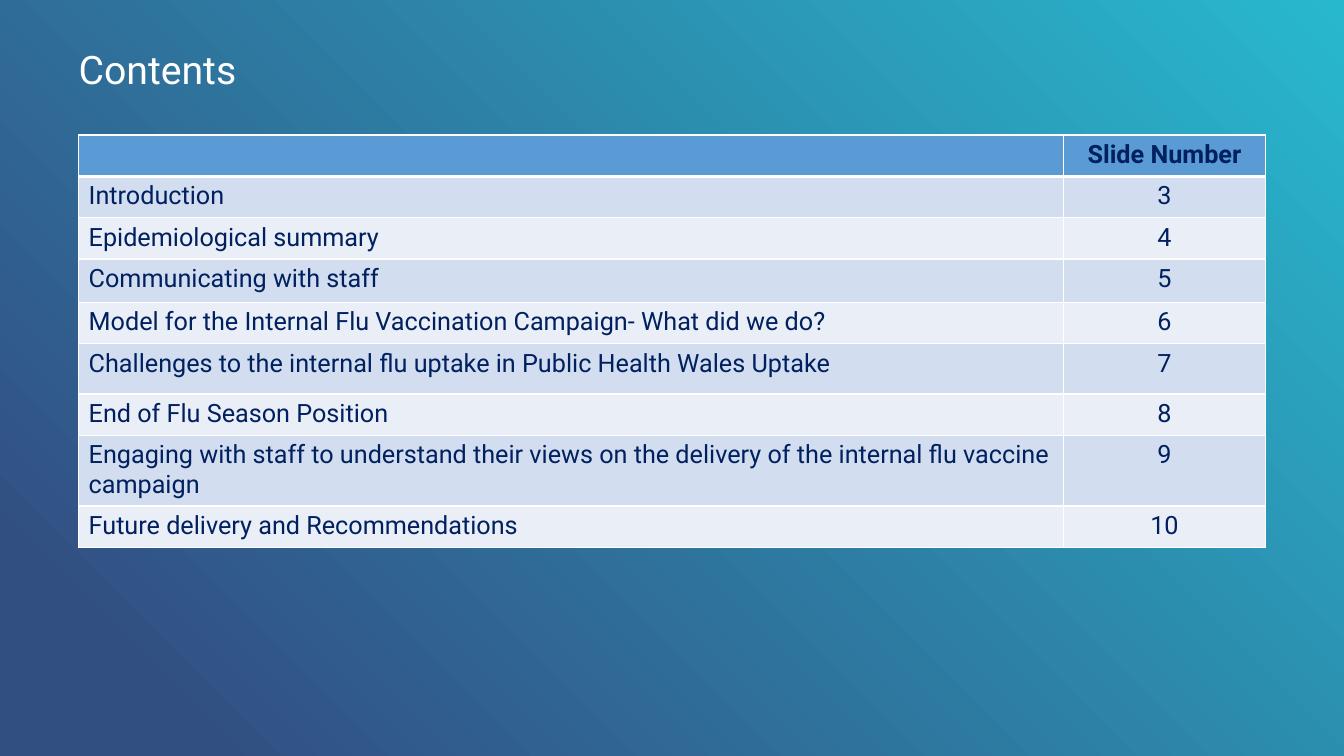
import pptx
import pptx.util
import pptx.dml.color
import pptx.enum.text
import pptx.oxml
import pptx.oxml.ns
from dataclasses import dataclass

Inches = pptx.util.Inches
Pt = pptx.util.Pt
ALIGN = pptx.enum.text.PP_ALIGN


@dataclass(frozen=True)
class Theme:
    font: str = "Roboto"
    title: int = 28
    body: int = 18
    white: str = "FFFFFF"
    navy: str = "002060"
    head: str = "5B9BD5"
    bands: tuple = ("D2DEEF", "EAEFF7")
    stops: tuple = ((0.1, "324F82"), (1, "28B8CE"))


THEME = Theme()
LEFT, WIDTH = 0.78, 11.77
COLS = (9.77, 2)

# Topic, slide number and row height
ROWS = (
    ("", "Slide Number", 0.41),
    ("Introduction", "3", 0.41),
    ("Epidemiological summary", "4", 0.41),
    ("Communicating with staff", "5", 0.43),
    ("Model for the Internal Flu Vaccination Campaign- What did we do?", "6", 0.41),
    ("Challenges to the internal flu uptake in Public Health Wales Uptake", "7", 0.5),
    ("End of Flu Season Position", "8", 0.41),
    ("Engaging with staff to understand their views on the delivery of the "
     "internal flu vaccine campaign", "9", 0.7),
    ("Future delivery and Recommendations", "10", 0.41),
)


def rgb(code):
    return pptx.dml.color.RGBColor.from_string(code)


def style(font, size, color, bold=False):
    font.name = THEME.font
    font.size = Pt(size)
    font.bold = bold
    font.color.rgb = rgb(color)


def paint(slide):
    fill = slide.background.fill
    fill.gradient()
    fill.gradient_angle = 45
    for stop, (place, color) in zip(fill.gradient_stops, THEME.stops):
        stop.position = place
        stop.color.rgb = rgb(color)


def add_title(slide, text):
    box = slide.shapes.add_textbox(Inches(LEFT), Inches(0.5), Inches(WIDTH), Inches(0.43))
    frame = box.text_frame
    frame.word_wrap = True
    frame.margin_left = frame.margin_right = frame.margin_top = frame.margin_bottom = 0
    frame.text = text
    para = frame.paragraphs[0]
    para.line_spacing = 0.9
    style(para.runs[0].font, THEME.title, THEME.white)


def add_edge(cell, side, width):
    line = pptx.oxml.parse_xml(
        f'<a:ln{side} {pptx.oxml.ns.nsdecls("a")} w="{Pt(width)}">'
        f'<a:solidFill><a:srgbClr val="{THEME.white}"/></a:solidFill></a:ln{side}>')
    cell._tc.get_or_add_tcPr().append(line)


def fill_cell(cell, text, row, col):
    # Borders: a thick rule parts the header from the body
    thick = {(0, "B"), (1, "T")}
    for side in "LRTB":
        add_edge(cell, side, 3 if (row, side) in thick else 1)
    cell.fill.solid()
    cell.fill.fore_color.rgb = rgb(THEME.bands[(row - 1) % 2] if row else THEME.head)

    # Text
    cell.text_frame.text = text
    para = cell.text_frame.paragraphs[0]
    para.alignment = ALIGN.CENTER if col else ALIGN.LEFT
    style(para.font, THEME.body, THEME.navy, row == 0)
    for run in para.runs:
        style(run.font, THEME.body, THEME.navy, row == 0)


def add_grid(slide):
    high = sum(row[-1] for row in ROWS)
    frame = slide.shapes.add_table(len(ROWS), len(COLS), Inches(LEFT), Inches(1.34),
                                   Inches(WIDTH), Inches(high))
    table = frame.table
    for col, width in enumerate(COLS):
        table.columns[col].width = Inches(width)
    for row, (*texts, height) in enumerate(ROWS):
        table.rows[row].height = Inches(height)
        for col, text in enumerate(texts):
            fill_cell(table.cell(row, col), text, row, col)


def main():
    deck = pptx.Presentation()
    deck.slide_width, deck.slide_height = Inches(13.33), Inches(7.5)
    slide = deck.slides.add_slide(deck.slide_layouts[6])
    paint(slide)
    add_grid(slide)
    add_title(slide, "Contents")
    deck.save("out.pptx")


if __name__ == "__main__":
    main()
